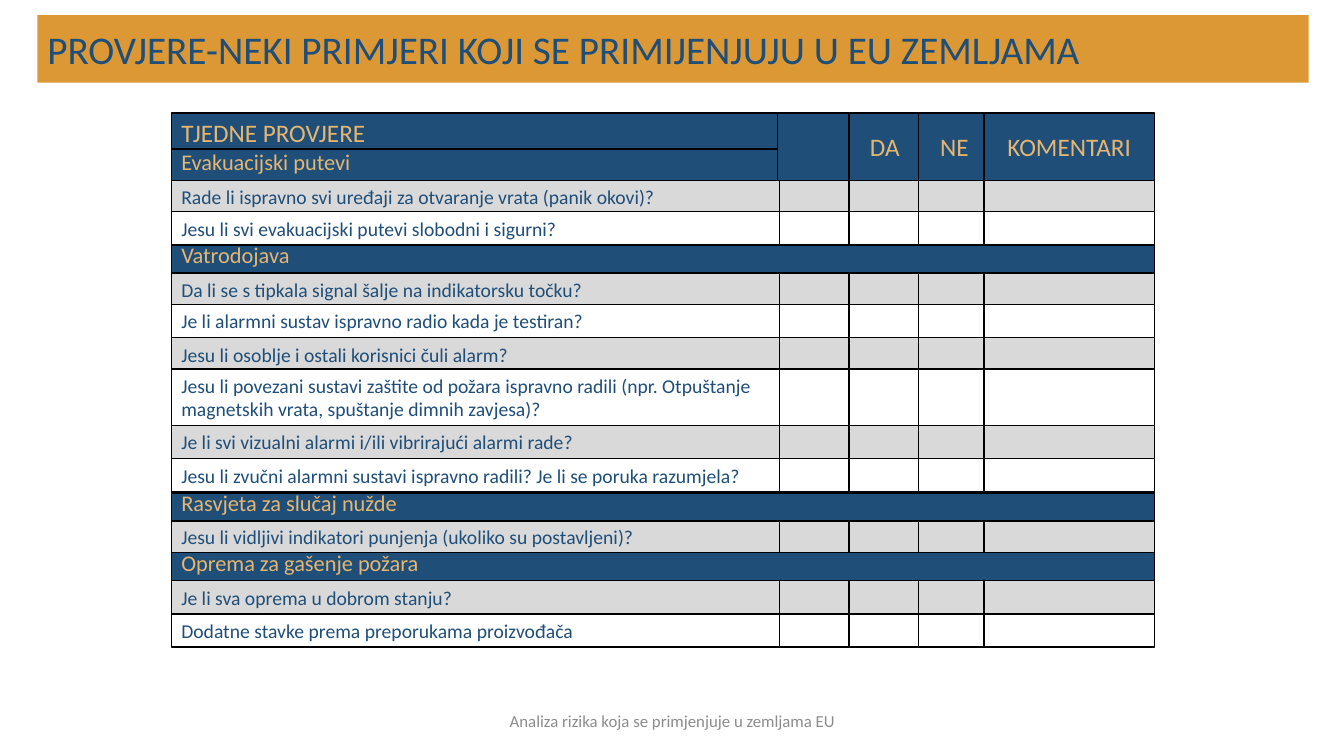
from pptx import Presentation
from pptx.dml.color import RGBColor
from pptx.enum.shapes import MSO_SHAPE
from pptx.enum.text import MSO_ANCHOR, MSO_AUTO_SIZE, PP_ALIGN
from pptx.util import Inches, Pt

NAVY, GOLD, SAND, GREY, WHITE = "1F4E79", "DB9835", "E6B670", "D9D9D9", "FFFFFF"
TOP, MIDDLE, BOTTOM = MSO_ANCHOR.TOP, MSO_ANCHOR.MIDDLE, MSO_ANCHOR.BOTTOM
LEFT, CENTER = PP_ALIGN.LEFT, PP_ALIGN.CENTER


def write(box, text, size, ink, anchor=MIDDLE, align=LEFT):
    frame_format = {
        "word_wrap": True,
        "auto_size": MSO_AUTO_SIZE.NONE,
        "vertical_anchor": anchor,
    }
    for name, value in frame_format.items():
        setattr(box.text_frame, name, value)
    para = box.text_frame.paragraphs[0]
    para.alignment = align
    span = para.add_run()
    span.text = text
    for name, value in {"name": "Calibri", "size": Pt(size), "bold": False}.items():
        setattr(span.font, name, value)
    span.font.color.rgb = RGBColor.from_string(ink)


def add_cell(left, top, width, height, fill):
    cell = page.shapes.add_shape(
        MSO_SHAPE.RECTANGLE, Inches(left), Inches(top), Inches(width), Inches(height)
    )
    cell.shadow.inherit = False
    cell.fill.solid()
    cell.fill.fore_color.rgb = RGBColor.from_string(fill)
    cell.line.color.rgb = RGBColor.from_string("000000")
    cell.line.width = Pt(1)
    return cell


deck = Presentation()
deck.slide_width, deck.slide_height = Inches(13.33), Inches(7.5)
page = deck.slides.add_slide(deck.slide_layouts[5])

title = page.shapes.title
title_format = {"left": 0.37, "top": 0.15, "width": 12.61, "height": 0.67}
for name, value in title_format.items():
    setattr(title, name, Inches(value))
title.fill.solid()
title.fill.fore_color.rgb = RGBColor.from_string(GOLD)
write(title, "PROVJERE-NEKI PRIMJERI KOJI SE PRIMIJENJUJU U EU ZEMLJAMA", 28, NAVY)

footer = page.shapes.add_textbox(Inches(4.42), Inches(6.95), Inches(4.5), Inches(0.4))
write(footer, "Analiza rizika koja se primjenjuje u zemljama EU", 12, "8C8C8C", align=CENTER)

table_left, table_width, question_width = 1.7, 9.75, 6.03
answer_columns = [(7.73, 0.71), (8.42, 0.71), (9.11, 0.71), (9.76, 1.69)]

week = add_cell(table_left, 1.12, 6.04, 0.39, NAVY)
write(week, "TJEDNE PROVJERE", 18, SAND, BOTTOM)
add_cell(7.71, 1.12, 0.73, 0.67, NAVY)
for (left, width), heading in zip(answer_columns[1:], ["DA", "NE", "KOMENTARI"]):
    write(add_cell(left, 1.12, width, 0.67, NAVY), heading, 18, SAND, align=CENTER)

questions = [
    (1.79, 0.33, GREY, "Rade li ispravno svi uređaji za otvaranje vrata (panik okovi)?"),
    (2.1, 0.33, WHITE, "Jesu li svi evakuacijski putevi slobodni i sigurni?"),
    (2.71, 0.33, GREY, "Da li se s tipkala signal šalje na indikatorsku točku?"),
    (3.02, 0.33, WHITE, "Je li alarmni sustav ispravno radio kada je testiran?"),
    (3.35, 0.33, GREY, "Jesu li osoblje i ostali korisnici čuli alarm?"),
    (3.66, 0.56, WHITE, "Jesu li povezani sustavi zaštite od požara ispravno radili "
                        "(npr. Otpuštanje magnetskih vrata, spuštanje dimnih zavjesa)?"),
    (4.22, 0.33, GREY, "Je li svi vizualni alarmi i/ili vibrirajući alarmi rade?"),
    (4.55, 0.33, WHITE, "Jesu li zvučni alarmni sustavi ispravno radili? Je li se poruka razumjela?"),
    (5.16, 0.33, GREY, "Jesu li vidljivi indikatori punjenja (ukoliko su postavljeni)?"),
    (5.76, 0.33, GREY, "Je li sva oprema u dobrom stanju?"),
    (6.09, 0.33, WHITE, "Dodatne stavke prema preporukama proizvođača"),
]
for top, height, fill, question in questions:
    cell = add_cell(table_left, top, question_width, height, fill)
    write(cell, question, 14, NAVY, TOP)
    for left, width in answer_columns:
        add_cell(left, top, width, height, fill)

sections = [
    (1.48, 6.01, 0.31, "Evakuacijski putevi"),
    (2.43, table_width, 0.28, "Vatrodojava"),
    (4.89, table_width, 0.28, "Rasvjeta za slučaj nužde"),
    (5.48, table_width, 0.28, "Oprema za gašenje požara"),
]
for top, width, height, section in sections:
    write(add_cell(table_left, top, width, height, NAVY), section, 16, SAND, BOTTOM)

deck.save("out.pptx")
